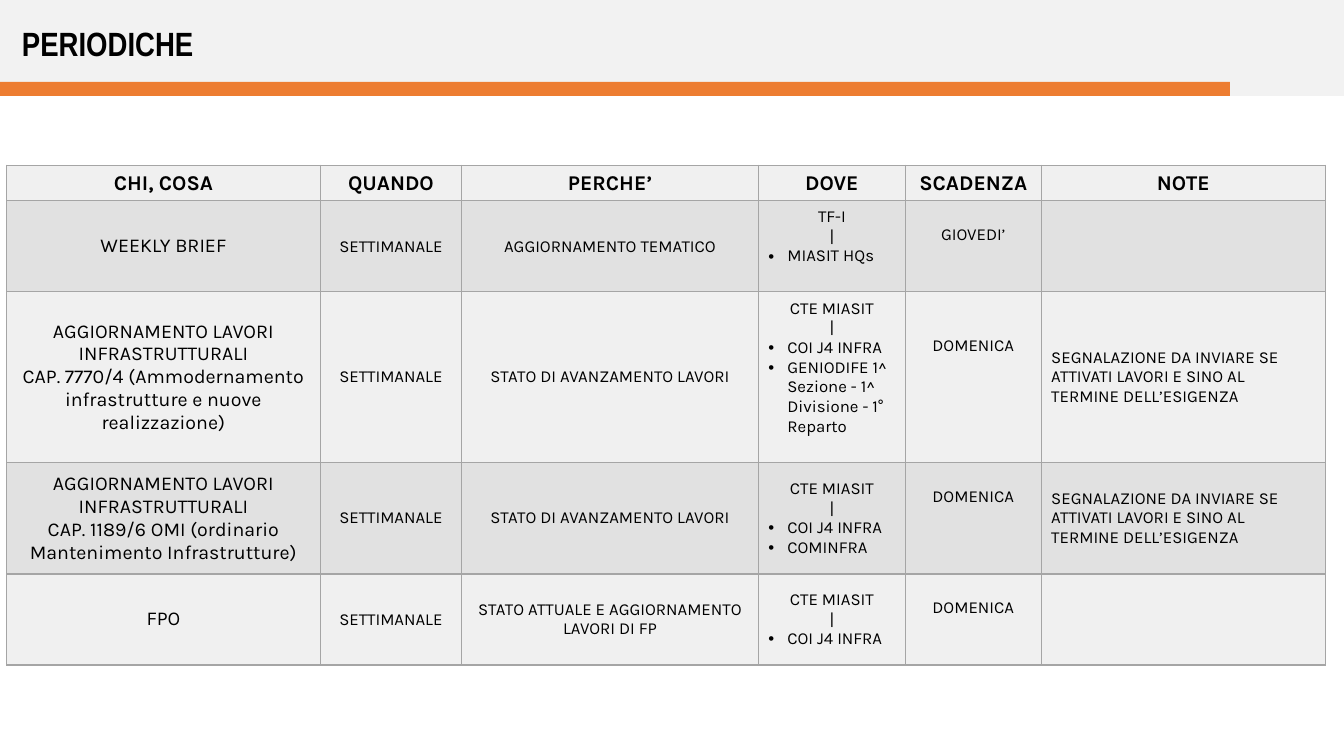
from lxml.etree import SubElement
from pptx import Presentation
from pptx.dml.color import RGBColor
from pptx.enum.shapes import MSO_SHAPE
from pptx.enum.text import MSO_ANCHOR, PP_ALIGN
from pptx.oxml.ns import qn
from pptx.util import Pt

ORANGE, PALE, LIGHT, MID, GRID = "ED7D31", "F2F2F2", "F0F0F0", "E1E1E1", "A5A5A5"
LINE = 14  # height of one 12 pt line
INDENT = 13.5

COLUMN_WIDTHS = [224, 101, 212, 105, 97, 203]
ROW_HEIGHTS = [25.5, 65, 122, 79.5, 65]
HEADINGS = ["CHI, COSA", "QUANDO", "PERCHE’", "DOVE", "SCADENZA", "NOTE"]
WORKS = "AGGIORNAMENTO LAVORI INFRASTRUTTURALI"
PROGRESS = "STATO DI AVANZAMENTO LAVORI"
REPORT = "SEGNALAZIONE DA INVIARE SE ATTIVATI LAVORI E SINO AL TERMINE DELL’ESIGENZA"

# who/what, why, sender, recipients, deadline, notes,
# lines left free below the recipients and above the deadline
ACTIVITIES = [
    (["WEEKLY BRIEF"], "AGGIORNAMENTO TEMATICO", "TF-I", ["MIASIT HQs"],
     "GIOVEDI’", "", 1, 1),
    ([WORKS, "CAP. 7770/4 (Ammodernamento infrastrutture e nuove realizzazione)"],
     PROGRESS, "CTE MIASIT",
     ["COI J4 INFRA", "GENIODIFE 1^ Sezione - 1^ Divisione - 1° Reparto"],
     "DOMENICA", REPORT, 1, 2),
    ([WORKS, "CAP. 1189/6 OMI (ordinario Mantenimento Infrastrutture)"],
     PROGRESS, "CTE MIASIT", ["COI J4 INFRA", "COMINFRA"],
     "DOMENICA", REPORT, 0, 1),
    (["FPO"], "STATO ATTUALE E AGGIORNAMENTO LAVORI DI FP", "CTE MIASIT",
     ["COI J4 INFRA"], "DOMENICA", "", 0, 1),
]


def color(value):
    return RGBColor.from_string(value)


def apply_format(target, values):
    for name, value in values.items():
        setattr(target, name, value)


def format_font(font, name, size, bold):
    apply_format(font, {"name": name, "size": Pt(size), "bold": bold})
    font.color.rgb = color("000000")


def add_bar(slide, top, width, height, fill):
    bar = slide.shapes.add_shape(MSO_SHAPE.RECTANGLE, 0, Pt(top), Pt(width), Pt(height))
    bar.shadow.inherit = False
    bar.fill.solid()
    bar.fill.fore_color.rgb = color(fill)
    bar.line.fill.background()


def add_title(slide, text):
    title = slide.shapes.title
    apply_format(title, {"left": Pt(8.5), "top": Pt(12.5), "width": Pt(590), "height": Pt(36)})
    frame = title.text_frame
    apply_format(frame, {"text": text, "word_wrap": True, "vertical_anchor": MSO_ANCHOR.MIDDLE})
    paragraph = frame.paragraphs[0]
    paragraph.alignment = PP_ALIGN.LEFT
    format_font(paragraph.font, "Arial Narrow", 24, True)
    slide.shapes.element.append(title.element)  # in front of the bars


def add_bullet(paragraph):
    properties = paragraph._p.get_or_add_pPr()
    properties.set("marL", str(Pt(INDENT)))
    properties.set("indent", str(-Pt(INDENT)))
    SubElement(properties, qn("a:buFont"), typeface="Arial")
    SubElement(properties, qn("a:buChar"), char="•")


def style_cell(cell, fill):
    """Draw the grid lines and the fill of a cell."""
    properties = cell._tc.get_or_add_tcPr()
    for side in ("a:lnL", "a:lnR", "a:lnT", "a:lnB"):
        line = SubElement(properties, qn(side), w=str(Pt(1)))
        SubElement(SubElement(line, qn("a:solidFill")), qn("a:srgbClr"), val=GRID)
    cell.fill.solid()
    cell.fill.fore_color.rgb = color(fill)


def write_cell(cell, lines, bullets=(), size=12, bold=False,
               alignment=PP_ALIGN.CENTER, anchor=MSO_ANCHOR.MIDDLE, above=0, below=0):
    """Fill a cell, keeping a number of lines free above or below its text."""
    apply_format(cell, {
        "vertical_anchor": anchor,
        "margin_top": Pt(3.6 + above * LINE),
        "margin_bottom": Pt(3.6 + below * LINE),
    })
    frame = cell.text_frame
    frame.text = "\n".join([*lines, *bullets])
    for index, paragraph in enumerate(frame.paragraphs):
        if index < len(lines):
            paragraph.alignment = alignment
        else:
            add_bullet(paragraph)
        format_font(paragraph.font, "Karla", size, bold)


def write_activity(cells, activity):
    what, why, sender, recipients, deadline, notes, below, above = activity
    write_cell(cells[0], what, size=14)
    write_cell(cells[1], ["SETTIMANALE"])
    write_cell(cells[2], [why])
    write_cell(cells[3], [sender, "|"], recipients, below=below)
    write_cell(cells[4], [deadline], anchor=MSO_ANCHOR.TOP, above=above)
    if notes:
        write_cell(cells[5], [notes], alignment=PP_ALIGN.LEFT)


def add_schedule(slide):
    table = slide.shapes.add_table(
        len(ROW_HEIGHTS), len(COLUMN_WIDTHS), Pt(4.75), Pt(118),
        Pt(sum(COLUMN_WIDTHS)), Pt(sum(ROW_HEIGHTS))).table
    apply_format(table, {"first_row": False, "horz_banding": False})
    for column, width in zip(table.columns, COLUMN_WIDTHS):
        column.width = Pt(width)
    for index, (row, height) in enumerate(zip(table.rows, ROW_HEIGHTS)):
        row.height = Pt(height)
        for cell in row.cells:
            style_cell(cell, MID if index % 2 else LIGHT)
    for cell, heading in zip(table.rows[0].cells, HEADINGS):
        write_cell(cell, [heading], size=15, bold=True)
    for index, activity in enumerate(ACTIVITIES, start=1):
        write_activity(list(table.rows[index].cells), activity)


def main():
    presentation = Presentation()
    apply_format(presentation, {"slide_width": Pt(960), "slide_height": Pt(540)})
    slide = presentation.slides.add_slide(presentation.slide_layouts[5])
    add_bar(slide, 0, 960, 68.5, PALE)
    add_bar(slide, 58.5, 878.5, 10, ORANGE)
    add_title(slide, "PERIODICHE")
    add_schedule(slide)
    presentation.save("out.pptx")


if __name__ == "__main__":
    main()
